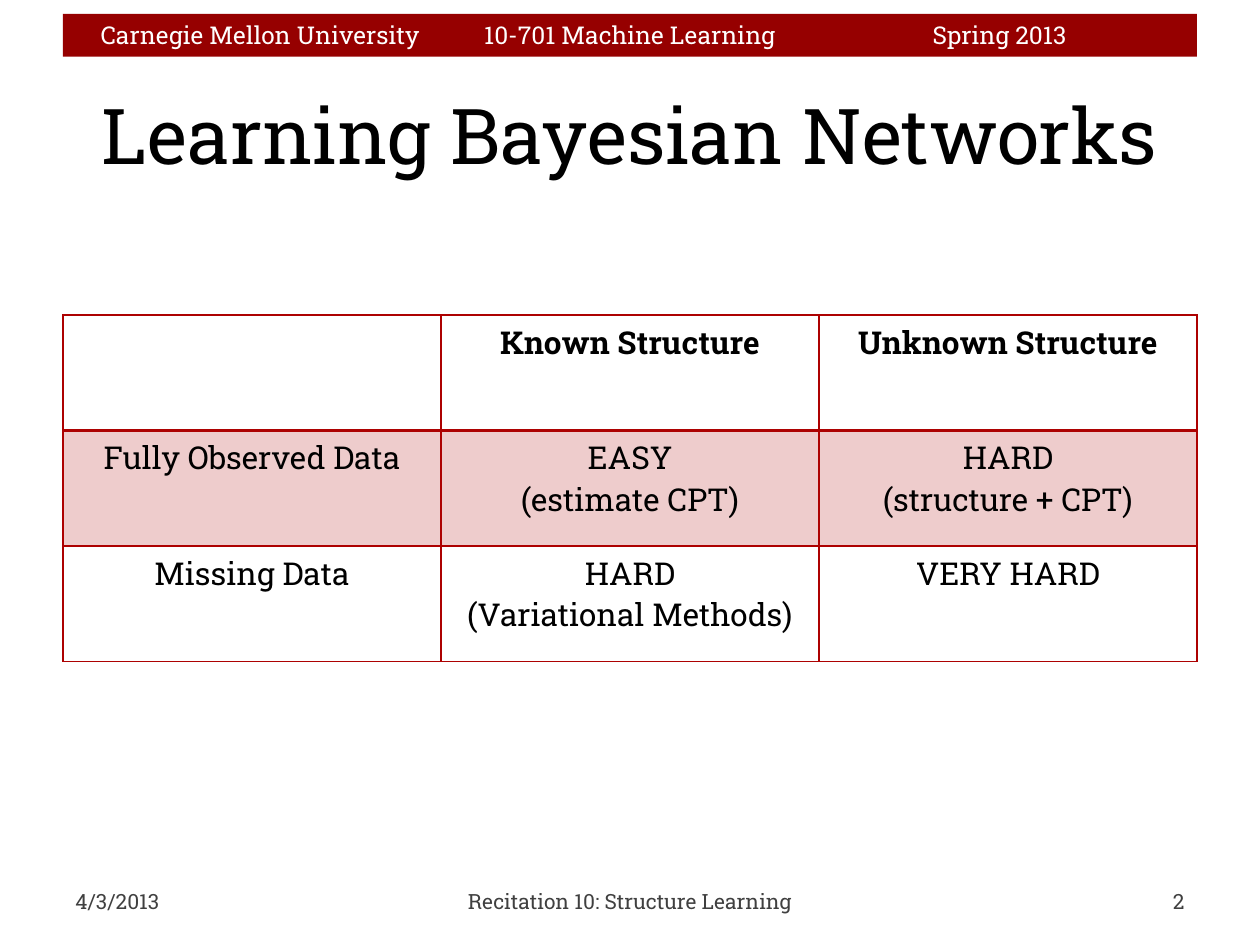
import pptx
import pptx.dml.color
import pptx.enum.shapes
import pptx.enum.text
import pptx.oxml
import pptx.oxml.ns
import pptx.util
from lxml import etree

Inches = pptx.util.Inches
ALIGN = pptx.enum.text.PP_ALIGN
ANCHOR = pptx.enum.text.MSO_ANCHOR
FONT = "Roboto Slab"
RED = "AD0101"
BORDER_SIDES = ("lnL", "lnR", "lnT", "lnB")


def color(hex_value):
    return pptx.dml.color.RGBColor.from_string(hex_value)


def apply_format(target, values):
    for name, value in values.items():
        setattr(target, name, value)


def write(frame, lines, size, ink="000000", align=ALIGN.CENTER, bold=False):
    for index, line in enumerate(lines):
        paragraph = frame.paragraphs[0] if index == 0 else frame.add_paragraph()
        paragraph.alignment = align
        run = paragraph.add_run()
        run.text = line
        apply_format(run.font, {"name": FONT, "size": pptx.util.Pt(size), "bold": bold})
        run.font.color.rgb = color(ink)


def add_text(slide, box, line, size, **style):
    frame = slide.shapes.add_textbox(*map(Inches, box)).text_frame
    apply_format(frame, {"word_wrap": True, "vertical_anchor": ANCHOR.MIDDLE})
    write(frame, [line], size, **style)


def add_course_banner(slide, box, labels):
    banner = slide.shapes.add_shape(
        pptx.enum.shapes.MSO_SHAPE.RECTANGLE, *map(Inches, box))
    banner.shadow.inherit = False
    banner.fill.solid()
    banner.fill.fore_color.rgb = color("960000")
    banner.line.fill.background()
    frame = banner.text_frame
    apply_format(frame, {
        "word_wrap": True,
        "vertical_anchor": ANCHOR.TOP,
        "auto_size": pptx.enum.text.MSO_AUTO_SIZE.SHAPE_TO_FIT_TEXT,
    })
    body = frame._txBody.find(pptx.oxml.ns.qn("a:bodyPr"))
    body.set("numCol", str(len(labels)))
    write(frame, labels, 14, ink="FFFFFF")


def add_borders(cell, widths):
    properties = cell._tc.get_or_add_tcPr()
    for side, width in zip(BORDER_SIDES, widths):
        properties.append(pptx.oxml.parse_xml(
            f'<a:{side} {pptx.oxml.ns.nsdecls("a")} w="{pptx.util.Pt(width)}">'
            f'<a:solidFill><a:srgbClr val="{RED}"/></a:solidFill></a:{side}>'))


def tint(cell, percent):
    cell.fill.solid()
    cell.fill.fore_color.rgb = color(RED)
    swatch = cell._tc.tcPr.find(".//" + pptx.oxml.ns.qn("a:solidFill") + "[last()]")
    swatch = cell._tc.tcPr.findall(pptx.oxml.ns.qn("a:solidFill"))[0][0]
    etree.SubElement(swatch, pptx.oxml.ns.qn("a:alpha"), val=str(percent * 1000))


def add_difficulty_table(slide, box, rows):
    table = slide.shapes.add_table(len(rows), len(rows[0]), *map(Inches, box)).table
    apply_format(table, {"first_row": False, "horz_banding": False})
    for row_index, row in enumerate(rows):
        top = 2 if row_index == 1 else 1
        bottom = 2 if row_index == 0 else 1
        for column_index, lines in enumerate(row):
            cell = table.cell(row_index, column_index)
            add_borders(cell, (1, 1, top, bottom))
            if row_index == 1:
                tint(cell, 20)
            else:
                cell.fill.background()
            write(cell.text_frame, lines, 18, bold=row_index == 0)


def add_footer(slide, box, date, topic, number):
    left, top, width, height = box
    side, middle = 2.33, 3.17
    parts = [
        (left, side, date, ALIGN.LEFT),
        (left + width - side, side, number, ALIGN.RIGHT),
        (left + (width - middle) / 2, middle, topic, ALIGN.CENTER),
    ]
    for part_left, part_width, line, align in parts:
        add_text(slide, (part_left, top, part_width, height), line, 12,
                 ink="404040", align=align)


def main():
    deck = pptx.Presentation()
    apply_format(deck, {"slide_width": Inches(10), "slide_height": Inches(7.5)})
    slide = deck.slides.add_slide(deck.slide_layouts[6])
    left, width = 0.5, 9
    add_course_banner(slide, (left, 0.11, width, 0.34), [
        "Carnegie Mellon University", "10-701 Machine Learning", "Spring 2013"])
    add_text(slide, (left, 0.58, width, 0.97), "Learning Bayesian Networks", 44)
    add_footer(slide, (left, 6.95, width, 0.4),
               "4/3/2013", "Recitation 10: Structure Learning", "2")
    add_difficulty_table(slide, (left, 2.5, width, 2.75), [
        [[], ["Known Structure"], ["Unknown Structure"]],
        [["Fully Observed Data"], ["EASY", "(estimate CPT)"],
         ["HARD", "(structure + CPT)"]],
        [["Missing Data"], ["HARD", "(Variational Methods)"], ["VERY HARD"]],
    ])
    deck.save("out.pptx")


if __name__ == "__main__":
    main()
